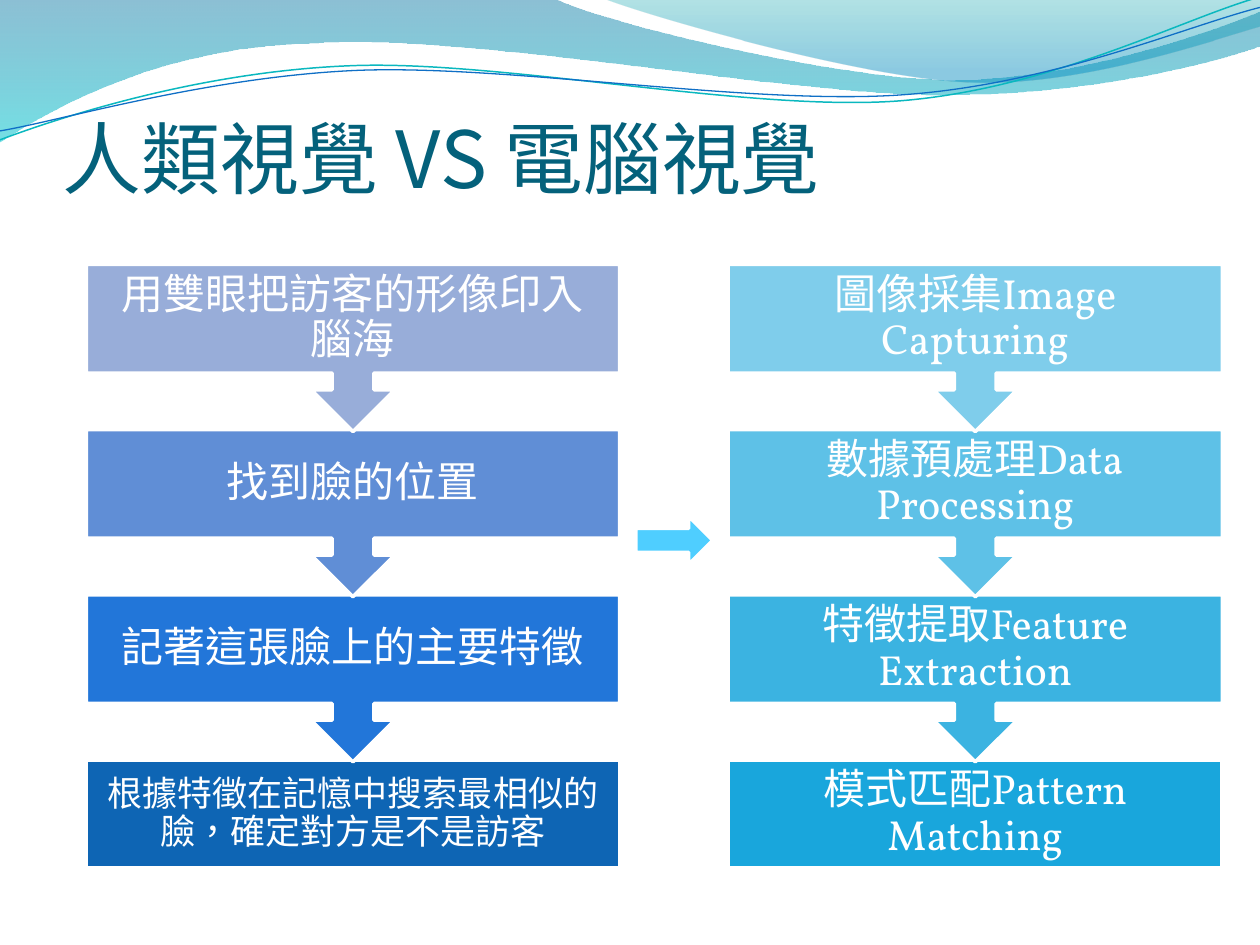
from lxml.etree import SubElement
from pptx import Presentation
from pptx.dml.color import RGBColor
from pptx.enum.shapes import MSO_SHAPE
from pptx.enum.text import MSO_ANCHOR, PP_ALIGN
from pptx.oxml.ns import qn
from pptx.util import Cm, Pt

CJK, LATIN = "Noto Sans CJK TC", "Vollkorn"

TITLE = "人類視覺 VS 電腦視覺"

# Flow columns: left, width, steps of (text, size, inset, fill, opacity)
COLUMNS = [
    (1.74, 10.75, [
        ("用雙眼把訪客的形像印入腦海", 24, 0.48, "98ADD9", 100),
        ("找到臉的位置", 24, 0.48, "608ED6", 100),
        ("記著這張臉上的主要特徵", 24, 0.48, "2276D9", 100),
        ("根據特徵在記憶中搜索最相似的臉，確定對方是不是訪客", 20, 0.4, "0E65B4", 100),
    ]),
    (14.68, 9.96, [
        ("圖像採集Image Capturing", 24, 0.48, "009DD9", 50),
        ("數據預處理Data Processing", 24, 0.48, "009DD9", 63),
        ("特徵提取Feature Extraction", 24, 0.48, "009DD9", 77),
        ("模式匹配Pattern Matching", 24, 0.48, "009DD9", 90),
    ]),
]
TOP, PITCH, BOX_H, CALLOUT_H = 5.33, 3.33, 2.18, 3.37

# Header waves: start point, then lines (one point) or Bezier curves (three points)
WAVES = [
    ((0, 0), [
        [(11.18, -0.03)],
        [(12.09, 0.43), (16.87, 1.6), (19.25, 1.6)],
        [(21.67, 1.6), (24.33, 0.66), (25.4, 0.23)],
        [(25.43, 0.91)],
        [(24.97, 1.12), (22.1, 1.93), (18.95, 1.91)],
        [(15.8, 1.91), (9.7, 0.71), (6.53, 0.86)],
        [(3.28, 0.91), (1.17, 2.11), (-0.03, 2.87)],
    ], [(0, "0074A1", 45), (1, "00C6CF", 55)]),
    ((12.17, -0.03), [
        [(12.93, 0.28), (17.32, 1.57), (19.53, 1.65)],
        [(21.74, 1.75), (24.41, 0.81), (25.4, 0.53)],
        [(25.4, 0)],
    ], [(0, "00A1A9", 30), (0.8, "008BBF", 45)]),
]
# Thin strokes, drawn level and then tilted
STROKES = [
    ((-0.05, 2.22), [
        [(1.19, 1.82), (4.02, 1.04), (7.05, 1.06)],
        [(10.05, 1.07), (15.02, 2.37), (18.08, 2.29)],
        [(21.13, 2.2), (23.87, 0.91), (25.41, 0.55)],
    ], "0AB8BF", 0.85),
    ((-0.04, 2.04), [
        [(1.16, 1.9), (4.18, 1.15), (7.2, 1.16)],
        [(10.25, 1.18), (15.13, 2.25), (18.18, 2.17)],
        [(21.21, 2.1), (23.93, 1.06), (25.45, 0.75)],
    ], "0F6FC6", 0.75),
]
TILT = 357.3

prs = Presentation()
prs.slide_width, prs.slide_height = Cm(25.4), Cm(19.05)
s = prs.slides.add_slide(prs.slide_layouts[6])


def rgb(value):
    return RGBColor.from_string(value)


def set_opacity(fill_element, percents):
    """Give each colour below the element its opacity."""
    for color, percent in zip(fill_element.iter(qn("a:srgbClr")), percents):
        SubElement(color, qn("a:alpha"), val=str(percent * 1000))


def add_text(text, left, top, width, height, size=24, font=LATIN, color="FFFFFF",
             align=PP_ALIGN.CENTER, anchor=MSO_ANCHOR.MIDDLE,
             insets=(0, 0, 0, 0), spacing=None):
    tf = s.shapes.add_textbox(Cm(left), Cm(top), Cm(width), Cm(height)).text_frame
    tf.word_wrap = True
    tf.vertical_anchor = anchor
    tf.margin_left, tf.margin_top, tf.margin_right, tf.margin_bottom = map(Cm, insets)
    p = tf.paragraphs[0]
    p.alignment, p.line_spacing = align, spacing
    r = p.add_run()
    r.text = text
    r.font.size, r.font.name = Pt(size), font
    r.font.color.rgb = rgb(color)
    r.font._element.set("lang", "zh-TW")
    SubElement(r.font._element, qn("a:ea"), typeface=CJK)


def add_block(kind, left, top, width, height, fill, opacity=100, rotation=0):
    sp = s.shapes.add_shape(kind, Cm(left), Cm(top), Cm(width), Cm(height))
    sp.shadow.inherit = False
    sp.rotation = rotation
    sp.fill.solid()
    sp.fill.fore_color.rgb = rgb(fill)
    if opacity < 100:
        set_opacity(sp._element.spPr.find(qn("a:solidFill")), [opacity])
    sp.line.color.rgb = rgb("FFFFFF")
    sp.line.width = Pt(2)


def add_curve(start, segments, close):
    """Lay out all points as lines, then merge each three-point segment into a Bezier."""
    builder = s.shapes.build_freeform(Cm(start[0]), Cm(start[1]))
    builder.add_line_segments([(Cm(x), Cm(y)) for seg in segments for x, y in seg],
                              close=close)
    sp = builder.convert_to_shape()
    sp.shadow.inherit = False
    lines = iter(list(sp._element.iter(qn("a:lnTo"))))
    for segment in segments:
        first, *rest = [next(lines) for _ in segment]
        if rest:
            first.tag = qn("a:cubicBezTo")
            for line in rest:
                first.append(line[0])
                line.getparent().remove(line)
    return sp


# Header waves
for start, segments, stops in WAVES:
    sp = add_curve(start, segments, close=True)
    sp.line.fill.background()
    sp.fill.gradient()
    sp.fill.gradient_angle = 270
    for stop, (position, color, _) in zip(sp.fill.gradient_stops, stops):
        stop.position = position
        stop.color.rgb = rgb(color)
    set_opacity(sp._element.spPr.find(qn("a:gradFill")), [stop[2] for stop in stops])

for start, segments, color, width in STROKES:
    sp = add_curve(start, segments, close=False)
    sp.rotation = TILT
    sp.fill.background()
    sp.line.color.rgb = rgb(color)
    sp.line.width = Pt(width)

# Title
add_text(TITLE, 1.27, 1.96, 23.37, 2.16, size=45, font=CJK, color="04617B",
         align=PP_ALIGN.LEFT, anchor=MSO_ANCHOR.BOTTOM, insets=(0, 0.13, 0, 0))

# Flow columns, from the bottom step up so each arrow lies over the next box
for left, width, steps in COLUMNS:
    for i, (text, size, inset, fill, opacity) in reversed(list(enumerate(steps))):
        top = TOP + i * PITCH
        if i == len(steps) - 1:
            add_block(MSO_SHAPE.RECTANGLE, left, top, width, BOX_H, fill, opacity)
        else:
            add_block(MSO_SHAPE.UP_ARROW_CALLOUT, left, top, width, CALLOUT_H,
                      fill, opacity, rotation=180)
        add_text(text, left, top, width, BOX_H, size=size, insets=[inset] * 4, spacing=0.9)

# Arrow between the columns
add_block(MSO_SHAPE.RIGHT_ARROW, 12.82, 10.41, 1.55, 0.97, "4FCEFF")

prs.save("out.pptx")
